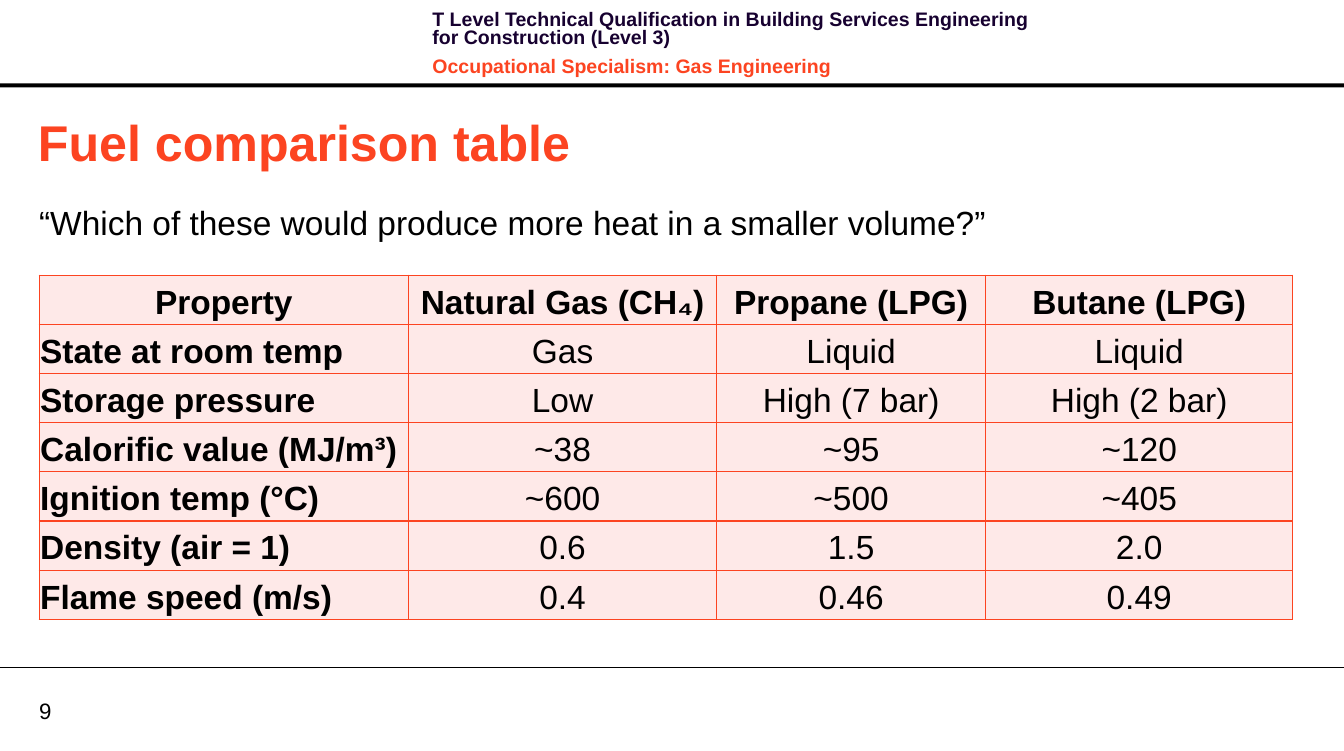
from pptx import Presentation
from pptx.dml.color import RGBColor
from pptx.enum.shapes import MSO_CONNECTOR, MSO_SHAPE
from pptx.enum.text import MSO_ANCHOR, PP_ALIGN
from pptx.oxml.ns import qn
from pptx.util import Inches, Pt
from lxml import etree

LINE, RECT = MSO_CONNECTOR.STRAIGHT, MSO_SHAPE.RECTANGLE
TOP, MID = MSO_ANCHOR.TOP, MSO_ANCHOR.MIDDLE
LEFT, MIDDLE = PP_ALIGN.LEFT, PP_ALIGN.CENTER

COLORS = {"black": "000000", "navy": "170130", "red": "FC4421", "pink": "FEE9E8"}
WIDTH, HEIGHT = 13.39, 7.48
EDGE = 0.39

HEADS = [
    ("T Level Technical Qualification in Building Services Engineering "
     "for Construction (Level 3)", "navy", {"space_after": Pt(4)}),
    ("Occupational Specialism: Gas Engineering", "red",
     {"space_before": Pt(4), "space_after": Pt(4)}),
]
COLS = [3.68, 3.07, 2.68, 3.06]
ROW = 0.49
FUELS = [
    ["Property", "Natural Gas (CH₄)", "Propane (LPG)", "Butane (LPG)"],
    ["State at room temp", "Gas", "Liquid", "Liquid"],
    ["Storage pressure", "Low", "High (7 bar)", "High (2 bar)"],
    ["Calorific value (MJ/m³)", "~38", "~95", "~120"],
    ["Ignition temp (°C)", "~600", "~500", "~405"],
    ["Density (air = 1)", "0.6", "1.5", "2.0"],
    ["Flame speed (m/s)", "0.4", "0.46", "0.49"],
]


def apply(item, values):
    for name, value in values.items():
        setattr(item, name, value)


class Deck:
    font = "Arial"

    def __init__(self):
        self.show = Presentation()
        apply(self.show, {"slide_width": Inches(WIDTH), "slide_height": Inches(HEIGHT)})
        self.slide = self.show.slides.add_slide(self.show.slide_layouts[6])

    def color(self, name):
        return RGBColor.from_string(COLORS[name])

    def words(self, para, text, size, color="black", bold=False, **form):
        apply(para, form)
        run = para.add_run()
        run.text = text
        apply(run.font, {"name": self.font, "size": Pt(size), "bold": bold})
        run.font.color.rgb = self.color(color)

    def text(self, box, lines, size, bold=False, anchor=TOP, inset=(0, 0)):
        frame = self.slide.shapes.add_textbox(*map(Inches, box)).text_frame
        side, end = map(Inches, inset)
        apply(frame, {"word_wrap": True, "vertical_anchor": anchor,
                      "margin_left": side, "margin_right": side,
                      "margin_top": end, "margin_bottom": end})
        for i, (text, color, form) in enumerate(lines):
            para = frame.add_paragraph() if i else frame.paragraphs[0]
            self.words(para, text, size, color, bold, **form)

    def bar(self, box, color):
        shape = self.slide.shapes.add_shape(RECT, *map(Inches, box))
        shape.shadow.inherit = False
        shape.fill.solid()
        shape.fill.fore_color.rgb = self.color(color)
        shape.line.fill.background()

    def rule(self, y, color, width):
        line = self.slide.shapes.add_connector(LINE, 0, Inches(y), Inches(WIDTH), Inches(y))
        line.line.color.rgb = self.color(color)
        line.line.width = Pt(width)
        etree.SubElement(line._element.spPr, qn("a:effectLst"))

    def border(self, cell, color, width):
        props = cell._tc.get_or_add_tcPr()
        for side in ("lnL", "lnR", "lnT", "lnB"):
            line = etree.SubElement(props, qn(f"a:{side}"), w=str(Pt(width)))
            fill = etree.SubElement(line, qn("a:solidFill"))
            etree.SubElement(fill, qn("a:srgbClr"), val=COLORS[color])

    def table(self, x, y, rows, cols, high, size):
        box = map(Inches, (x, y, sum(cols), high * len(rows)))
        grid = self.slide.shapes.add_table(len(rows), len(cols), *box).table
        for col, width in zip(grid.columns, cols):
            col.width = Inches(width)
        pad = Inches(0.01)
        for r, row in enumerate(rows):
            grid.rows[r].height = Inches(high)
            for c, text in enumerate(row):
                cell = grid.cell(r, c)
                apply(cell, {"vertical_anchor": MID, "margin_left": pad, "margin_right": pad,
                             "margin_top": pad, "margin_bottom": pad})
                self.border(cell, "red", 1)
                cell.fill.solid()
                cell.fill.fore_color.rgb = self.color("pink")
                self.words(cell.text_frame.paragraphs[0], text, size,
                           bold=r == 0 or c == 0,
                           alignment=LEFT if r and c == 0 else MIDDLE,
                           line_spacing=1.15, space_after=Pt(8))


def main():
    deck = Deck()

    # Header and footer
    deck.bar((0, 0.83, WIDTH, 0.04), "black")
    deck.text((EDGE, 6.94, 0.64, 0.27), [("9", "black", {})], 16, anchor=MID)
    deck.rule(6.65, "black", 0.75)
    heads = [(text, color, {"line_spacing": Pt(13.1), **form}) for text, color, form in HEADS]
    deck.text((4.21, 0.07, 6.37, 0.64), heads, 14, bold=True, inset=(0.1, 0.05))

    # Title and question
    deck.text((0.28, 1.05, 12.72, 0.71), [("Fuel comparison table", "red", {})], 36,
              bold=True, anchor=MID, inset=(0.1, 0.05))
    deck.text((EDGE, 1.97, 10.24, 4.53),
              [("“Which of these would produce more heat in a smaller volume?”", "black",
                {"line_spacing": 1.1, "space_after": Pt(12)})], 24)

    # Fuel table
    deck.table(EDGE, 2.74, FUELS, COLS, ROW, 24)

    deck.show.save("out.pptx")


if __name__ == "__main__":
    main()
